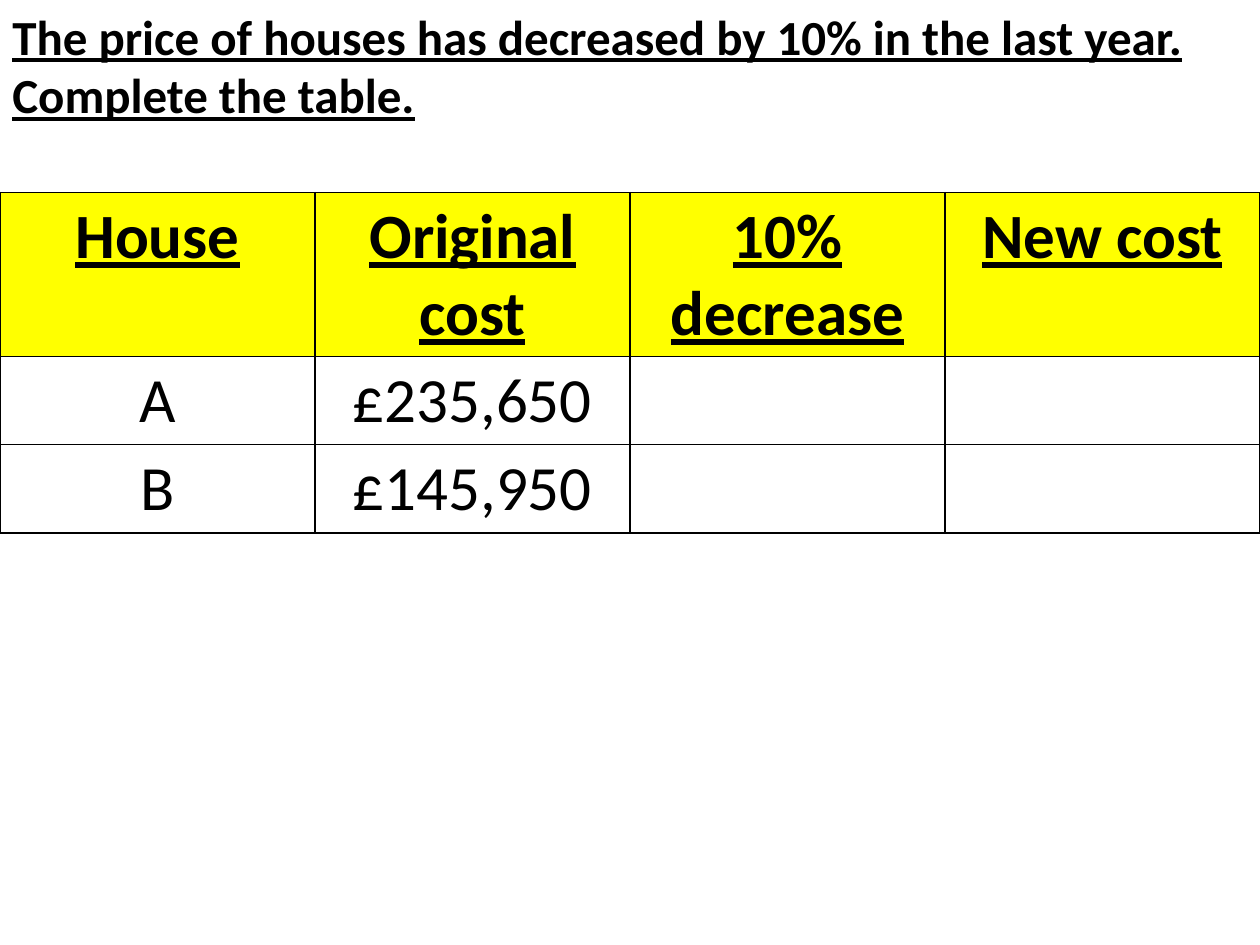
"""Build a worksheet slide about a 10% decrease in house prices."""
from lxml import etree
from pptx import Presentation
from pptx.dml.color import RGBColor
from pptx.enum.text import MSO_AUTO_SIZE, PP_ALIGN
from pptx.oxml.ns import qn
from pptx.util import Pt

LEFT, CENTER = PP_ALIGN.LEFT, PP_ALIGN.CENTER
GROW = MSO_AUTO_SIZE.SHAPE_TO_FIT_TEXT
FONT, BLACK, YELLOW, WHITE = "Calibri", "000000", "FFFF00", "FFFFFF"
WIDTH, HEIGHT = 720, 540

QUESTION = [
    "The price of houses has decreased by 10% in the last year.",
    "Complete the table.",
]
HOUSES = [
    ["House", "Original cost", "10% decrease", "New cost"],
    ["A", "£235,650", "", ""],
    ["B", "£145,950", "", ""],
]
ROW_HEIGHTS = [93.6, 50.4, 50.4]
TABLE_TOP = 110


def color(value):
    return RGBColor.from_string(value)


def write(paragraph, text, size=36, heading=False, align=LEFT):
    paragraph.alignment = align
    run = paragraph.add_run()
    run.text = text
    font = run.font
    font.name, font.size = FONT, Pt(size)
    font.bold = font.underline = heading
    font.color.rgb = color(BLACK)


def add_borders(cell, line_color=BLACK, width=1):
    properties = cell._tc.get_or_add_tcPr()
    for position, side in enumerate(("lnL", "lnR", "lnT", "lnB")):
        line = etree.Element(qn(f"a:{side}"), w=str(Pt(width)))
        fill = etree.SubElement(line, qn("a:solidFill"))
        etree.SubElement(fill, qn("a:srgbClr"), val=line_color)
        properties.insert(position, line)


def add_question(slide):
    box = slide.shapes.add_textbox(Pt(0), Pt(0), Pt(WIDTH), Pt(75))
    frame = box.text_frame
    frame.word_wrap = True
    frame.auto_size = GROW
    for index, text in enumerate(QUESTION):
        paragraph = frame.add_paragraph() if index else frame.paragraphs[0]
        write(paragraph, text, size=28, heading=True)


def add_house_table(slide):
    table = slide.shapes.add_table(
        len(HOUSES), len(HOUSES[0]), Pt(0), Pt(TABLE_TOP), Pt(WIDTH), Pt(sum(ROW_HEIGHTS))
    ).table
    for row, height in zip(table.rows, ROW_HEIGHTS):
        row.height = Pt(height)
    for row_index, texts in enumerate(HOUSES):
        heading = row_index == 0
        for column_index, text in enumerate(texts):
            cell = table.cell(row_index, column_index)
            cell.fill.solid()
            cell.fill.fore_color.rgb = color(YELLOW if heading else WHITE)
            add_borders(cell)
            if text:
                write(cell.text_frame.paragraphs[0], text, heading=heading, align=CENTER)


def main():
    presentation = Presentation()
    presentation.slide_width, presentation.slide_height = Pt(WIDTH), Pt(HEIGHT)
    slide = presentation.slides.add_slide(presentation.slide_layouts[6])
    add_question(slide)
    add_house_table(slide)
    presentation.save("out.pptx")


if __name__ == "__main__":
    main()
